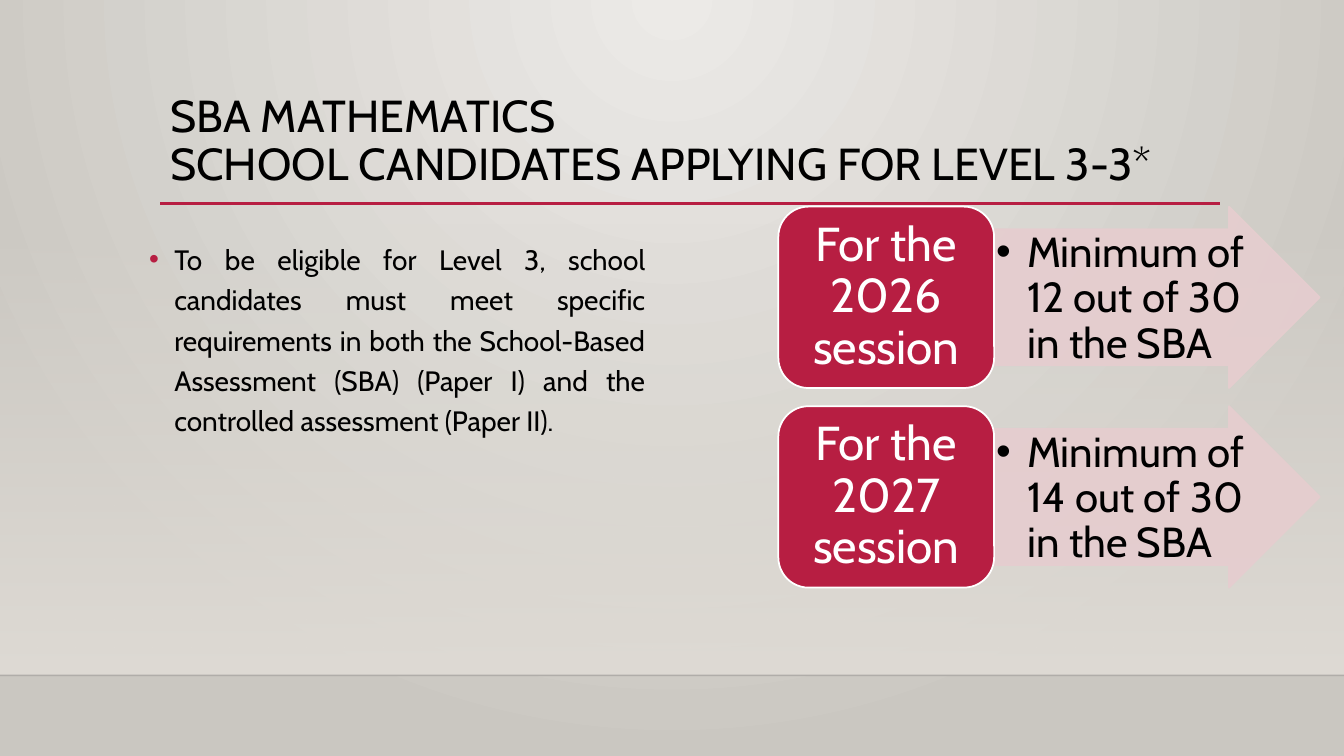
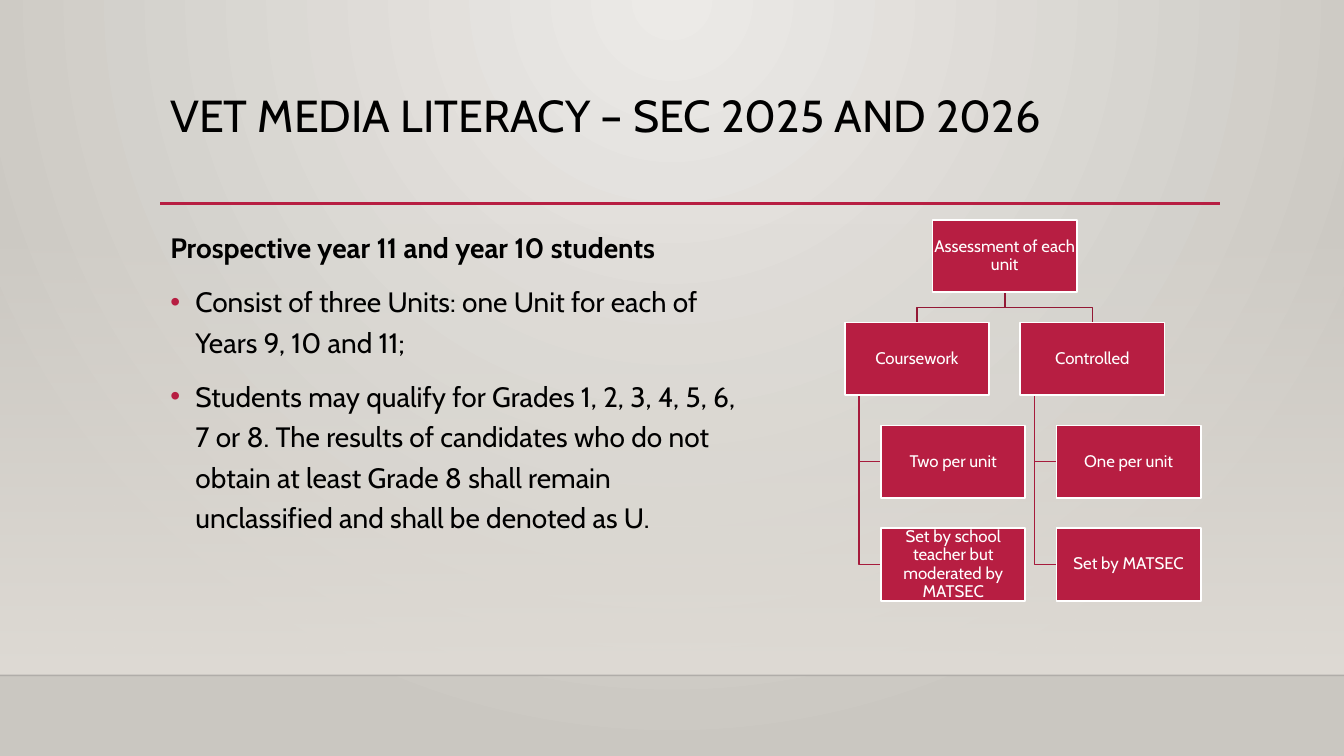
from lxml import etree
from pptx import Presentation
from pptx.dml.color import RGBColor
from pptx.enum.shapes import MSO_CONNECTOR, MSO_SHAPE
from pptx.enum.text import MSO_ANCHOR, PP_ALIGN
from pptx.oxml import parse_xml
from pptx.oxml.ns import nsdecls, qn
from pptx.util import Inches, Pt

RECTANGLE = MSO_SHAPE.RECTANGLE
ROUNDED = MSO_SHAPE.ROUNDED_RECTANGLE
ARROW = MSO_SHAPE.RIGHT_ARROW
STRAIGHT = MSO_CONNECTOR.STRAIGHT
TOP, MIDDLE = MSO_ANCHOR.TOP, MSO_ANCHOR.MIDDLE
LEFT, CENTER, JUSTIFY = PP_ALIGN.LEFT, PP_ALIGN.CENTER, PP_ALIGN.JUSTIFY

FONT = "Cabin"
COLOURS = {
    "text": "000000", "white": "FFFFFF", "accent": "B71E42", "pink": "E6CDCF",
    "branch": "931835", "leaf_branch": "A61B3C", "edge": "000001",
    "wall_light": "ECEAE7", "wall_dark": "CAC7C1", "glow": "DFDBD5",
}
PAGE_WIDTH, PAGE_HEIGHT = 13.33, 7.5
FLOOR_TOP = 6.7

# Format values: paragraph attributes and font attributes
TITLE = {"para": {"line_spacing": 0.9, "alignment": LEFT},
         "font": {"size": Pt(32)}, "colour": "text"}
BODY = {"para": {"line_spacing": 1.2, "alignment": LEFT},
        "font": {"size": Pt(20)}, "colour": "text", "gap": 10}
BODY_BULLET = {**BODY, "bullet": "accent", "indent": 0.25}
BODY_JUSTIFIED = {**BODY_BULLET, "para": {"line_spacing": 1.2, "alignment": JUSTIFY}}
BODY_HEADING = {**BODY, "font": {"size": Pt(20), "bold": True}}
ARROW_TEXT = {"para": {"line_spacing": 0.9, "alignment": LEFT},
              "font": {"size": Pt(30)}, "colour": "text",
              "bullet": "text", "indent": 0.31}
SESSION_TEXT = {"para": {"line_spacing": 0.9, "alignment": CENTER},
                "font": {"size": Pt(34)}, "colour": "white"}
NODE_TEXT = {**SESSION_TEXT, "font": {"size": Pt(12)}}


def rgb(name):
    return RGBColor.from_string(COLOURS[name])


def set_alpha(shape, percent):
    for colour in shape._element.spPr.iter(qn("a:srgbClr")):
        etree.SubElement(colour, qn("a:alpha")).set("val", str(percent * 1000))


def set_gradient(element, stops, direction):
    """Replace the first solid fill in element; stops are (position, colour, alpha)."""
    stop_xml = "".join(
        f'<a:gs pos="{position * 1000}"><a:srgbClr val="{COLOURS[name]}">'
        f'<a:alpha val="{alpha * 1000}"/></a:srgbClr></a:gs>'
        for position, name, alpha in stops)
    solid = element.find(".//" + qn("a:solidFill"))
    solid.getparent().replace(solid, parse_xml(
        f'<a:gradFill {nsdecls("a")} rotWithShape="1">'
        f"<a:gsLst>{stop_xml}</a:gsLst>{direction}</a:gradFill>"))


def add_bullet(para, colour, indent):
    properties = para._p.get_or_add_pPr()
    properties.set("marL", str(Inches(indent)))
    properties.set("indent", str(-Inches(indent)))
    bullet_colour = etree.SubElement(properties, qn("a:buClr"))
    etree.SubElement(bullet_colour, qn("a:srgbClr")).set("val", COLOURS[colour])
    etree.SubElement(properties, qn("a:buFont")).set("typeface", "Arial")
    etree.SubElement(properties, qn("a:buChar")).set("char", "•")


def write(shape, entries, insets=(0.1, 0.05), anchor=TOP):
    """Fill a shape with (text, format) paragraphs."""
    frame = shape.text_frame
    across, down = (Inches(inset) for inset in insets)
    frame_values = {"word_wrap": True, "vertical_anchor": anchor,
                    "margin_left": across, "margin_right": across,
                    "margin_top": down, "margin_bottom": down}
    for name, value in frame_values.items():
        setattr(frame, name, value)
    for number, (text, style) in enumerate(entries):
        para = frame.add_paragraph() if number else frame.paragraphs[0]
        if "bullet" in style:
            add_bullet(para, style["bullet"], style["indent"])
        para.text = text
        for name, value in style["para"].items():
            setattr(para, name, value)
        if number:
            para.space_before = Pt(style["gap"])
        for span in para.runs:
            for name, value in {"name": FONT, **style["font"]}.items():
                setattr(span.font, name, value)
            span.font.color.rgb = rgb(style["colour"])


def add_text(page, box, entries):
    write(page.shapes.add_textbox(*map(Inches, box)), entries)


def add_block(page, kind, box, fill, line=None):
    shape = page.shapes.add_shape(kind, *map(Inches, box))
    shape.shadow.inherit = False
    shape.fill.solid()
    shape.fill.fore_color.rgb = rgb(fill)
    if line:
        shape.line.color.rgb = rgb(line)
        shape.line.width = Pt(1.25)
    else:
        shape.line.fill.background()
    return shape


def add_rule(page, left, right, top, colour, width):
    rule = page.shapes.add_connector(
        STRAIGHT, Inches(left), Inches(top), Inches(right), Inches(top))
    rule.line.color.rgb = rgb(colour)
    rule.line.width = Pt(width)
    etree.SubElement(rule._element.spPr, qn("a:effectLst"))
    return rule


def add_branch(page, points, colour):
    """Draw an open angled line through the points."""
    corners = [(Inches(x), Inches(y)) for x, y in points]
    builder = page.shapes.build_freeform(*corners[0])
    builder.add_line_segments(corners[1:], close=False)
    branch = builder.convert_to_shape()
    branch.shadow.inherit = False
    branch.fill.background()
    branch.line.color.rgb = rgb(colour)
    branch.line.width = Pt(1.25)


def add_page(deck, title):
    """Start a slide with the shared backdrop, rules and title."""
    page = deck.slides.add_slide(deck.slide_layouts[6])
    # Wall and floor
    page.background.fill.solid()
    set_gradient(page._element, [(0, "wall_light", 100), (100, "wall_dark", 100)],
                 '<a:path path="circle">'
                 '<a:fillToRect l="43000" t="0" r="43000" b="100000"/></a:path>')
    glow_top = 2.21
    glow = add_block(page, RECTANGLE,
                     (0, glow_top, PAGE_WIDTH, FLOOR_TOP - glow_top), "glow")
    set_gradient(glow._element, [(0, "glow", 0), (100, "glow", 100)],
                 '<a:lin ang="5400000" scaled="0"/>')
    set_alpha(add_rule(page, 0, PAGE_WIDTH, FLOOR_TOP, "edge", 1), 20)
    # Title and its rule
    add_rule(page, 1.59, 12.1, 2.02, "accent", 2.5)
    add_text(page, (1.59, 0.88, 10.5, 1.15), [(title, TITLE)])
    return page


def add_sessions(page, box, sessions):
    """Stack rows of a session label and an arrow with its minimum mark."""
    left, top, width, height = box
    row_height, label_width = 1.8, 2.14
    pitch = (height - row_height) / (len(sessions) - 1)
    for row, (session, minimum) in enumerate(sessions):
        row_top = top + row * pitch
        arrow = add_block(page, ARROW, (left + label_width, row_top,
                                        width - label_width, row_height), "pink", "pink")
        arrow.adjustments[0], arrow.adjustments[1] = 0.75, 0.5
        set_alpha(arrow, 90)
        write(arrow, [(minimum, ARROW_TEXT)], (0.02, 0.02))
        label = add_block(page, ROUNDED, (left, row_top, label_width, row_height),
                          "accent", "white")
        write(label, [(session, SESSION_TEXT)], (0.14, 0.07), MIDDLE)


def add_unit_tree(page, left, top, root, branches):
    """Draw a root, its branches in columns and their leaves below."""
    width, height = 1.43, 0.72
    column_pitch, row_pitch = 1.74, 1.02
    leaf_indent, trunk_indent = 0.36, 0.14
    root_left = left + (len(branches) - 1) * column_pitch / 2
    root_middle, root_bottom = root_left + width / 2, top + height
    branch_top = top + row_pitch
    fork = (root_bottom + branch_top) / 2
    nodes = [(root, root_left, top)]
    # Branch lines, behind the boxes
    for column, (heading, leaves) in enumerate(branches):
        branch_left = left + column * column_pitch
        branch_middle = branch_left + width / 2
        nodes.append((heading, branch_left, branch_top))
        add_branch(page, [(root_middle, root_bottom), (root_middle, fork),
                          (branch_middle, fork), (branch_middle, branch_top)], "branch")
        trunk, leaf_left = branch_left + trunk_indent, branch_left + leaf_indent
        for row, leaf in enumerate(leaves, start=1):
            leaf_top = branch_top + row * row_pitch
            leaf_middle = leaf_top + height / 2
            nodes.append((leaf, leaf_left, leaf_top))
            add_branch(page, [(trunk, branch_top + height), (trunk, leaf_middle),
                              (leaf_left, leaf_middle)], "leaf_branch")
    # Boxes
    for text, node_left, node_top in nodes:
        node = add_block(page, RECTANGLE, (node_left, node_top, width, height),
                         "accent", "white")
        write(node, [(text, NODE_TEXT)], (0.01, 0.01), MIDDLE)


def build_mathematics(deck):
    page = add_page(
        deck, "SBA MATHEMATICS\vSCHOOL CANDIDATES APPLYING FOR LEVEL 3-3*")
    add_text(page, (1.38, 2.29, 5.12, 3.77), [
        ("To be eligible for Level 3, school candidates must meet specific "
         "requirements in both the School-Based Assessment (SBA) (Paper I) and "
         "the controlled assessment (Paper II).", BODY_JUSTIFIED)])
    add_sessions(page, (7.72, 2.05, 5.37, 3.78), [
        ("For the 2026 session", "Minimum of 12 out of 30 in the SBA"),
        ("For the 2027 session", "Minimum of 14 out of 30 in the SBA")])


def build_media_literacy(deck):
    page = add_page(deck, "VET MEDIA LITERACY – SEC 2025 AND 2026")
    add_text(page, (1.59, 2.17, 5.81, 3.77), [
        ("Prospective year 11 and year 10 students", BODY_HEADING),
        ("Consist of three Units: one Unit for each of Years 9, 10 and 11;",
         BODY_BULLET),
        ("Students may qualify for Grades 1, 2, 3, 4, 5, 6, 7 or 8. The results of "
         "candidates who do not obtain at least Grade 8 shall remain unclassified "
         "and shall be denoted as U.", BODY_BULLET)])
    add_unit_tree(page, 8.38, 2.18, "Assessment of each unit", [
        ("Coursework", ["Two per unit",
                        "Set by school teacher but moderated by MATSEC"]),
        ("Controlled", ["One per unit", "Set by MATSEC"])])


def main():
    deck = Presentation()
    deck.slide_width, deck.slide_height = Inches(PAGE_WIDTH), Inches(PAGE_HEIGHT)
    build_mathematics(deck)
    build_media_literacy(deck)
    deck.save("out.pptx")


if __name__ == "__main__":
    main()
